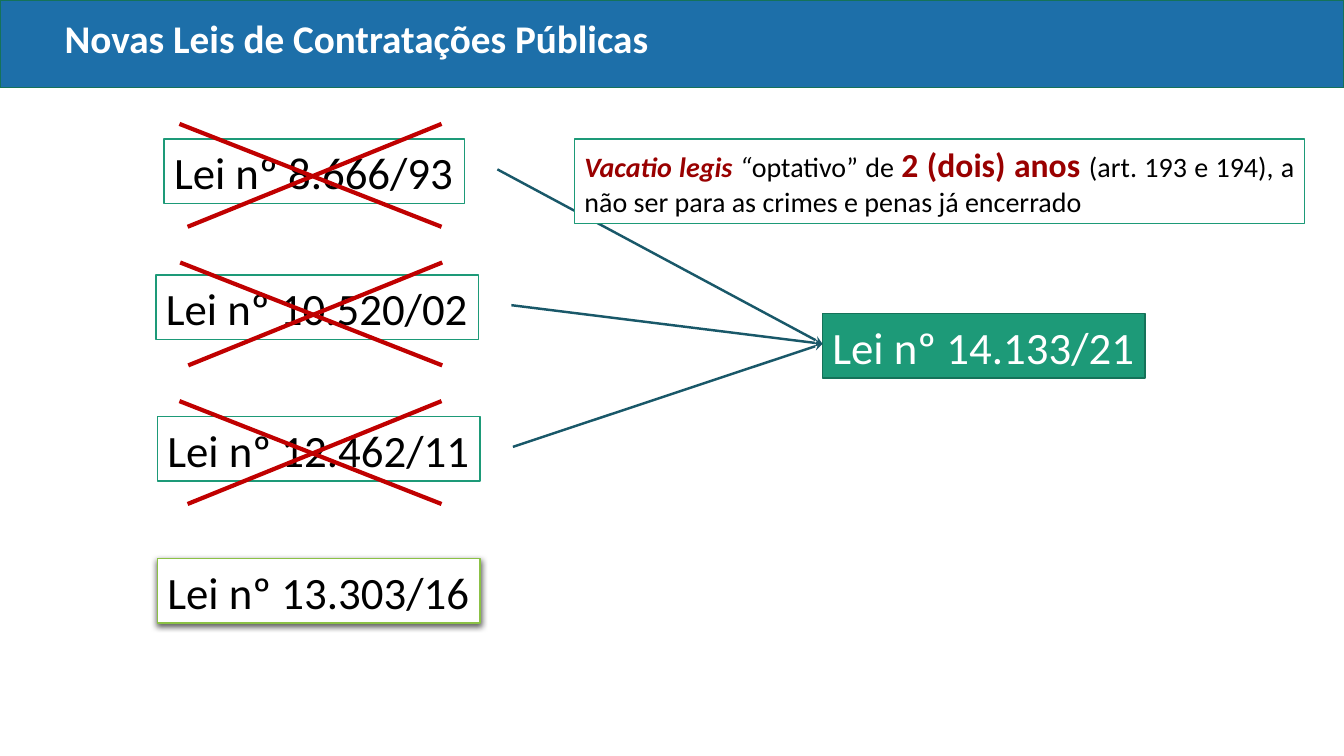
from lxml.etree import SubElement
from pptx import Presentation
from pptx.dml.color import RGBColor
from pptx.enum.shapes import MSO_CONNECTOR, MSO_SHAPE
from pptx.enum.text import MSO_ANCHOR, MSO_AUTO_SIZE, PP_ALIGN
from pptx.oxml import parse_xml
from pptx.oxml.ns import nsdecls, qn
from pptx.util import Pt

WHITE = RGBColor(0xFF, 0xFF, 0xFF)
BLACK = RGBColor(0x00, 0x00, 0x00)
BLUE = RGBColor(0x1D, 0x6F, 0xA9)
GREEN = RGBColor(0x1D, 0x9A, 0x78)
DARK_GREEN = RGBColor(0x15, 0x72, 0x59)
LIME = RGBColor(0x8B, 0xC1, 0x45)
RED = RGBColor(0xC0, 0x00, 0x00)
DARK_RED = RGBColor(0x99, 0x00, 0x00)
TEAL = RGBColor(0x19, 0x58, 0x69)
FONT = "Calibri"

# Content: lengths in points
HEADING = "Novas Leis de Contratações Públicas"
REVOKED_LAWS = [  # text, left, top, width, cross left
    ("Lei nº 8.666/93", 117.2, 99.4, 214.6, 128.2),
    ("Lei nº 10.520/02", 111.4, 196.4, 230.4, 128.7),
    ("Lei nº 12.462/11", 112.5, 297.6, 230.4, 128.2),
]
KEPT_LAW = ("Lei nº 13.303/16", 112.5, 399, 230.4)
NEW_LAW = ("Lei nº 14.133/21", 587.5, 224, 230.4)
VACATIO = [  # text, size, colour, bold, italic
    ("Vacatio legis", 20, DARK_RED, True, True),
    (" “", 20, BLACK, False, True),
    ("optativo” de ", 20, BLACK, False, False),
    ("2 (dois) anos ", 24, DARK_RED, True, False),
    ("(art. 193 e 194), a não ser para as crimes e penas já encerrado",
     20, BLACK, False, False),
]
LAW_HEIGHT = 46
CROSS_TOP, CROSS_PITCH = 88.5, 99
CROSS_WIDTH, CROSS_HEIGHT, CROSS_INSET = 187.2, 73.5, 5.8
ARROW_GAP, ARROW_RISE = 23.5, 1.4

prs = Presentation()
prs.slide_width, prs.slide_height = Pt(960), Pt(540)
slide = prs.slides.add_slide(prs.slide_layouts[5])
shapes = slide.shapes


def add_box(left, top, width, height, fill, outline):
    box = shapes.add_shape(MSO_SHAPE.RECTANGLE, Pt(left), Pt(top), Pt(width), Pt(height))
    box.shadow.inherit = False
    box.fill.solid()
    box.fill.fore_color.rgb = fill
    box.line.color.rgb = outline
    box.line.width = Pt(1)
    return box


def add_law(text, left, top, width, fill, outline, color):
    law = add_box(left, top, width, LAW_HEIGHT, fill, outline)
    frame = law.text_frame
    frame.word_wrap = False
    frame.auto_size = MSO_AUTO_SIZE.SHAPE_TO_FIT_TEXT
    frame.vertical_anchor = MSO_ANCHOR.BOTTOM
    paragraph = frame.paragraphs[0]
    paragraph.text = text
    paragraph.alignment = PP_ALIGN.LEFT
    paragraph.font.name, paragraph.font.size = FONT, Pt(32)
    paragraph.font.color.rgb = color
    return law


def add_line(x1, y1, x2, y2, color, width):
    line = shapes.add_connector(MSO_CONNECTOR.STRAIGHT, Pt(x1), Pt(y1), Pt(x2), Pt(y2))
    line.line.color.rgb = color
    line.line.width = Pt(width)
    SubElement(line._element.spPr, qn("a:effectLst"))
    return line


# Header band, kept behind the title
band = add_box(0, 0, 960, 62.6, BLUE, DARK_GREEN)
shapes._spTree.insert(2, band._element)

title = shapes.title
title.left, title.top, title.width, title.height = Pt(39), Pt(0), Pt(828), Pt(58.3)
title.text_frame.vertical_anchor = MSO_ANCHOR.MIDDLE
heading = title.text_frame.paragraphs[0]
heading.text = HEADING
heading.alignment = PP_ALIGN.LEFT
heading.line_spacing = 0.9
heading.font.name, heading.font.size, heading.font.bold = FONT, Pt(28), True
heading.font.color.rgb = WHITE

# Laws
for text, left, top, width, _ in REVOKED_LAWS:
    add_law(text, left, top, width, WHITE, GREEN, BLACK)
add_law(*NEW_LAW, GREEN, DARK_GREEN, WHITE)
kept_law = add_law(*KEPT_LAW, WHITE, LIME, BLACK)
kept_law._element.spPr.find(qn("a:effectLst")).append(parse_xml(
    f'<a:outerShdw {nsdecls("a")} blurRad="{Pt(4.5)}" dist="{Pt(1.5)}" dir="5400000" '
    'rotWithShape="0"><a:srgbClr val="000000"><a:alpha val="63000"/></a:srgbClr>'
    '</a:outerShdw>'))

# Crosses over the revoked laws
for row, (*_, left) in enumerate(REVOKED_LAWS):
    top = CROSS_TOP + row * CROSS_PITCH
    right, bottom = left + CROSS_WIDTH, top + CROSS_HEIGHT
    add_line(left, top, right, bottom, RED, 3)
    add_line(right, top, left + CROSS_INSET, bottom, RED, 3)

# Arrows from the revoked laws to the new one
arrow_drop = LAW_HEIGHT / 2 - ARROW_RISE
_, new_left, new_top, _ = NEW_LAW
for _, left, top, width, _ in REVOKED_LAWS:
    arrow = add_line(left + width + ARROW_GAP, top + arrow_drop,
                     new_left, new_top + arrow_drop, TEAL, 1.75)
    SubElement(arrow.line._get_or_add_ln(), qn("a:tailEnd"), type="stealth")

# Note on the transition period
note = add_box(410.4, 99.2, 521.5, 60.4, WHITE, GREEN)
note.text_frame.word_wrap = True
note.text_frame.auto_size = MSO_AUTO_SIZE.SHAPE_TO_FIT_TEXT
note.text_frame.vertical_anchor = MSO_ANCHOR.TOP
vacatio = note.text_frame.paragraphs[0]
vacatio.alignment = PP_ALIGN.JUSTIFY
vacatio.font.name = FONT
for text, size, color, bold, italic in VACATIO:
    run = vacatio.add_run()
    run.text = text
    run.font.name, run.font.size = FONT, Pt(size)
    run.font.bold, run.font.italic = bold, italic
    run.font.color.rgb = color

prs.save("out.pptx")
